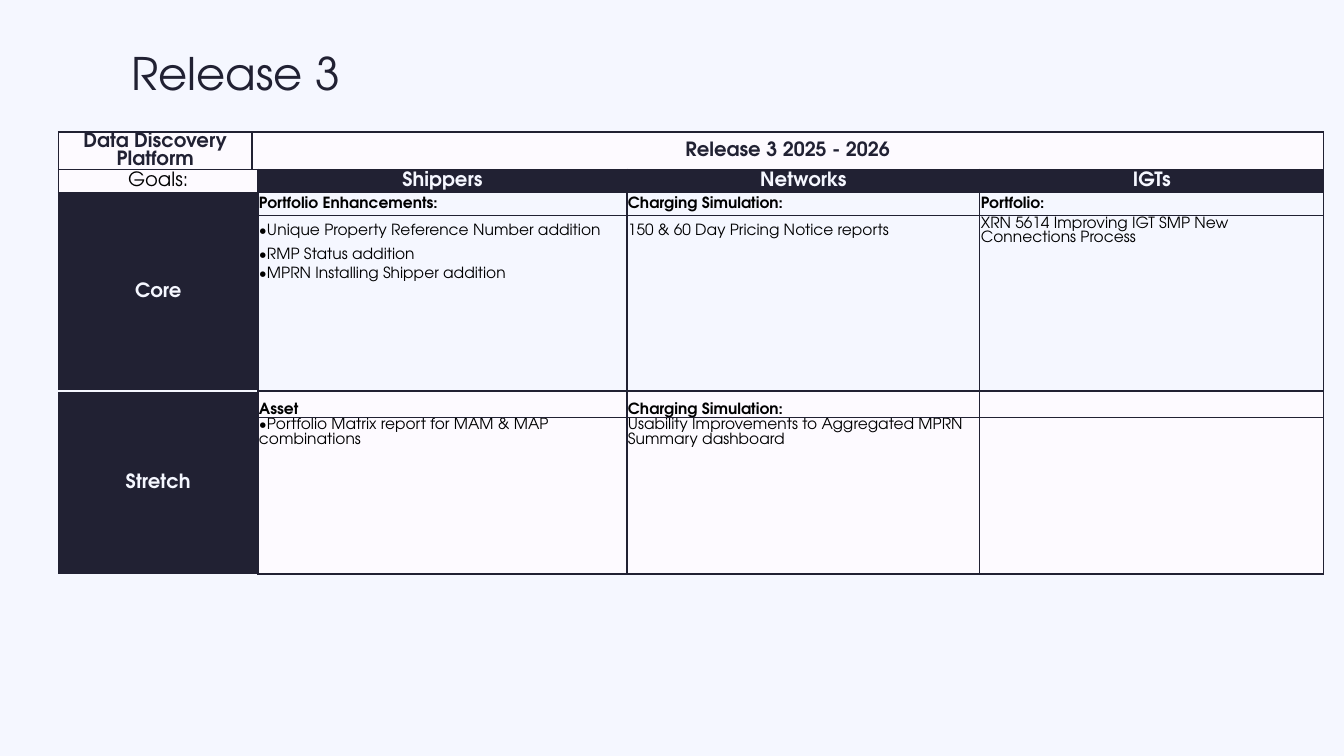
from lxml.etree import SubElement
from pptx import Presentation
from pptx.dml.color import RGBColor
from pptx.enum.text import MSO_ANCHOR, PP_ALIGN
from pptx.oxml.ns import qn
from pptx.util import Inches, Pt

FONT = "TeX Gyre Adventor"
NAVY, PALE, BLUSH, BLACK = "212133", "F5F7FF", "FDFAFF", "000000"
NO_GRID_STYLE = "{2D5ABB26-0587-4C30-8999-92F81FD0307C}"
SIDES = {"l": "a:lnL", "r": "a:lnR", "t": "a:lnT", "b": "a:lnB"}

COLUMN_WIDTHS = [1.92, 0.04, 3.66, 3.5, 3.41]
ROW_HEIGHTS = [0.23, 0.23, 0.23, 0.22, 0.19, 0.18, 0.19, 0.18, 0.18, 0.19,
               0.18, 0.11, 0.26, 0.18, 0.18, 0.24, 0.18, 0.21, 0.45]

CORE = [
    ["Portfolio Enhancements:", "Charging Simulation:", "Portfolio:"],
    ["•Unique Property Reference Number addition",
     "150 & 60 Day Pricing Notice reports",
     "XRN 5614 Improving IGT SMP New Connections Process"],
    ["•RMP Status addition", "", ""],
    ["•MPRN Installing Shipper addition", "", ""],
]
STRETCH = [
    ["Asset", "Charging Simulation:", ""],
    ["•Portfolio Matrix report for MAM & MAP combinations",
     "Usability Improvements to Aggregated MPRN Summary dashboard", ""],
]


def color(value):
    return RGBColor.from_string(value)


class SlideBuilder:
    def __init__(self, prs):
        self.s = prs.slides.add_slide(prs.slide_layouts[5])
        fill = self.s.background.fill
        fill.solid()
        fill.fore_color.rgb = color(PALE)

    def run(self, p, text, size, ink, bold=False):
        r = p.add_run()
        r.text = text
        r.font.name = FONT
        r.font.size = Pt(size)
        r.font.bold = bold
        r.font.color.rgb = color(ink)

    def title(self, text, left, top, width, height):
        sp = self.s.shapes.title
        sp.left, sp.top = Inches(left), Inches(top)
        sp.width, sp.height = Inches(width), Inches(height)
        tf = sp.text_frame
        tf.vertical_anchor = MSO_ANCHOR.MIDDLE
        p = tf.paragraphs[0]
        p.alignment = PP_ALIGN.LEFT
        p.line_spacing = 0.9
        self.run(p, text, 32, NAVY)

    def table(self, left, top, height):
        frame = self.s.shapes.add_table(
            len(ROW_HEIGHTS), len(COLUMN_WIDTHS), Inches(left), Inches(top),
            Inches(sum(COLUMN_WIDTHS)), Inches(height))
        tbl = frame.table
        tbl.first_row = tbl.horz_banding = False
        frame._element.find(".//" + qn("a:tableStyleId")).text = NO_GRID_STYLE
        for column, width in zip(tbl.columns, COLUMN_WIDTHS):
            column.width = Inches(width)
        for row, row_height in zip(tbl.rows, ROW_HEIGHTS):
            row.height = Inches(row_height)
        frame.height = Inches(height)
        return tbl

    def cell(self, cell, text, fill, ink=BLACK, size=11, bold=False,
             align=PP_ALIGN.LEFT, anchor=MSO_ANCHOR.MIDDLE, borders=None):
        cell.margin_left = cell.margin_right = cell.margin_top = Inches(0.01)
        cell.margin_bottom = 0
        cell.vertical_anchor = anchor
        self.borders(cell, borders or {})
        cell.fill.solid()
        cell.fill.fore_color.rgb = color(fill)
        p = cell.text_frame.paragraphs[0]
        p.alignment = align
        if text:
            self.run(p, text, size, ink, bold)
        else:
            end = SubElement(p._p, qn("a:endParaRPr"), sz=str(size * 100))
            SubElement(end, qn("a:latin"), typeface=FONT)

    def borders(self, cell, borders):
        tc_pr = cell._tc.get_or_add_tcPr()
        for side, tag in SIDES.items():
            if side in borders:
                ln = SubElement(tc_pr, qn(tag), w=str(Pt(1)))
                fill = SubElement(ln, qn("a:solidFill"))
                SubElement(fill, qn("a:srgbClr"), val=borders[side])

    def heading(self, tbl, row, col, text, fill, ink, bold=True, span=(1, 1), borders=None):
        cell = tbl.cell(row, col)
        if span != (1, 1):
            cell.merge(tbl.cell(row + span[0] - 1, col + span[1] - 1))
        self.cell(cell, text, fill, ink, 14, bold, PP_ALIGN.CENTER,
                  borders=borders or dict.fromkeys("lrtb", NAVY))

    def goals(self, tbl, first, count, lines, fill, anchor):
        for i in range(count):
            texts = lines[i] if i < len(lines) else [""] * 3
            sides = "lr" + ("t" if i == 0 else "") + ("b" if i == count - 1 else "")
            for col, text in enumerate(texts, 2):
                self.cell(tbl.cell(first + i, col), text, fill, bold=i == 0,
                          anchor=anchor if text else MSO_ANCHOR.TOP,
                          borders=dict.fromkeys(sides, NAVY))


def main():
    prs = Presentation()
    prs.slide_width, prs.slide_height = Inches(13.33), Inches(7.5)
    slide = SlideBuilder(prs)
    slide.title("Release 3", 1.2, 0.4, 11.63, 0.7)
    tbl = slide.table(0.58, 1.31, 4.78)

    slide.heading(tbl, 0, 0, "Data Discovery Platform", BLUSH, NAVY)
    slide.heading(tbl, 0, 1, "Release 3 2025 - 2026", BLUSH, NAVY, span=(1, 4))
    slide.heading(tbl, 1, 0, "Goals:", BLUSH, BLACK, bold=False, span=(1, 2))
    for col, audience in enumerate(["Shippers", "Networks", "IGTs"], 2):
        slide.heading(tbl, 1, col, audience, NAVY, PALE)

    slide.heading(tbl, 2, 0, "Core", NAVY, PALE, span=(10, 2),
                  borders={"l": NAVY, "r": NAVY, "t": NAVY, "b": PALE})
    slide.goals(tbl, 2, 10, CORE, PALE, MSO_ANCHOR.MIDDLE)
    slide.heading(tbl, 12, 0, "Stretch", NAVY, PALE, span=(7, 2),
                  borders={"t": PALE, "r": NAVY})
    slide.goals(tbl, 12, 7, STRETCH, BLUSH, MSO_ANCHOR.BOTTOM)
    prs.save("out.pptx")


if __name__ == "__main__":
    main()
